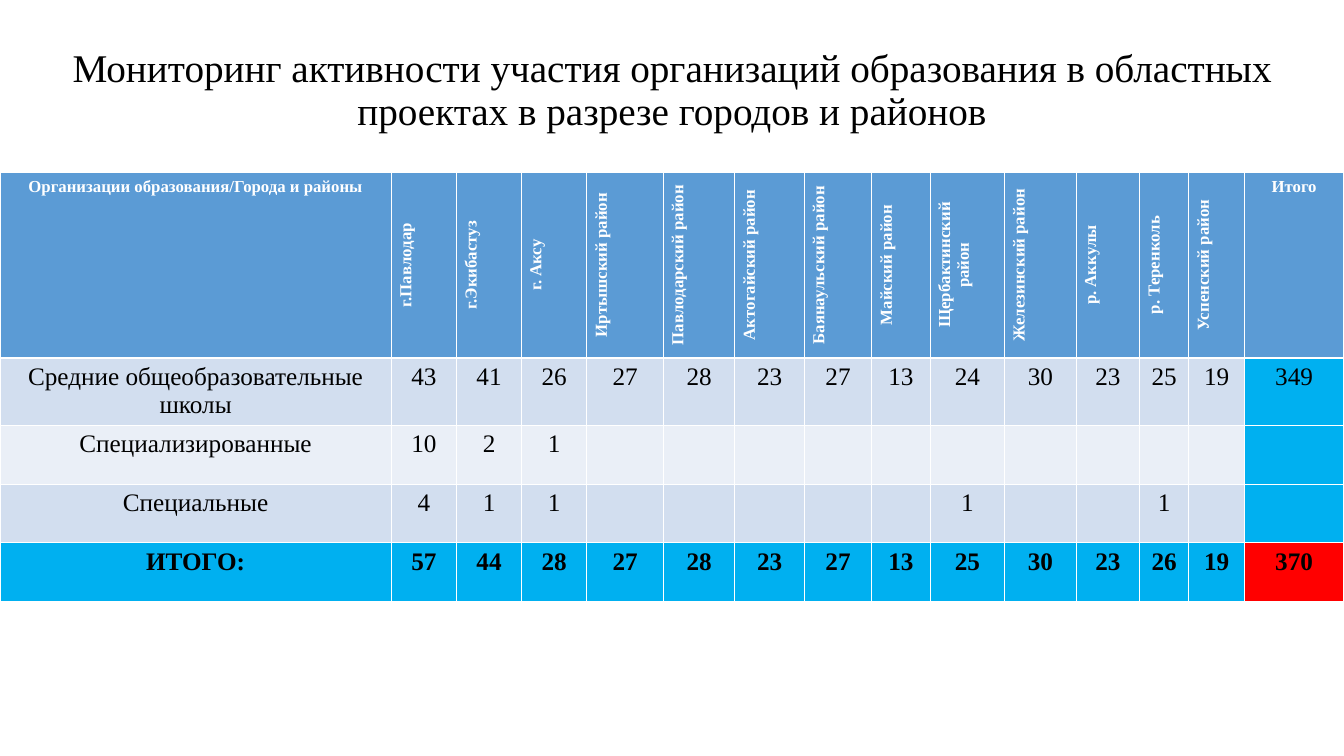
"""Build the slide that monitors participation of schools in regional projects."""
from pptx import Presentation
from pptx.dml.color import RGBColor
from pptx.enum.text import MSO_ANCHOR, PP_ALIGN
from pptx.util import Cm, Pt

COLORS = {
    "black": "000000",
    "white": "FFFFFF",
    "header": "5B9BD5",
    "odd": "D2DEEF",
    "even": "EAEFF7",
    "total": "00B0F0",
    "grand_total": "FF0000",
}
DISTRICTS = [
    "г.Павлодар", "г.Экибастуз", "г. Аксу", "Иртышский район",
    "Павлодарский район", "Актогайский район", "Баянаульский район",
    "Майский район", "Щербактинский район", "Железинский район",
    "р. Аккулы", "р. Теренколь", "Успенский район",
]
GENERAL = [43, 41, 26, 27, 28, 23, 27, 13, 24, 30, 23, 25, 19]
SPECIALIZED = [10, 2, 1] + [0] * 10
SPECIAL = [4, 1, 1, 0, 0, 0, 0, 0, 1, 0, 0, 1, 0]
TOTALS = [sum(counts) for counts in zip(GENERAL, SPECIALIZED, SPECIAL)]
ROWS = [
    ["Организации образования/Города и районы", *DISTRICTS, "Итого"],
    ["Средние общеобразовательные школы", *GENERAL, sum(GENERAL)],
    ["Специализированные", *SPECIALIZED, ""],
    ["Специальные", *SPECIAL, ""],
    ["ИТОГО:", *TOTALS, sum(TOTALS)],
]
COLUMN_WIDTHS = [9.86, 1.65, 1.63, 1.65, 1.93, 1.8, 1.75, 1.7,
                 1.47, 1.88, 1.8, 1.6, 1.24, 1.4, 2.51]
ROW_HEIGHTS = [2.82, 1.7, 1.48, 1.48, 1.48]
ROW_FILLS = ["header", "odd", "even", "odd", "total"]


def write_text(frame, text, size, color="black", bold=False):
    paragraph = frame.paragraphs[0]
    paragraph.alignment = PP_ALIGN.CENTER
    paragraph.font.size = Pt(size)
    if text:
        run = paragraph.add_run()
        run.text = text
        run.font.name = "Times New Roman"
        run.font.size = Pt(size)
        run.font.bold = bold
        run.font.color.rgb = RGBColor.from_string(COLORS[color])
    return paragraph


presentation = Presentation()
presentation.slide_width = Cm(33.87)
presentation.slide_height = Cm(19.05)
slide = presentation.slides.add_slide(presentation.slide_layouts[5])

title = slide.shapes.title
title.left, title.top, title.width, title.height = Cm(0), Cm(0), Cm(33.87), Cm(3.58)
title.text_frame.vertical_anchor = MSO_ANCHOR.MIDDLE
title.text_frame.margin_top = Cm(1.15)
heading = write_text(
    title.text_frame,
    "Мониторинг активности участия организаций образования в областных "
    "проектах в разрезе городов и районов",
    size=28,
)
heading.line_spacing = 0.9

table = slide.shapes.add_table(
    len(ROWS), len(COLUMN_WIDTHS), Cm(0), Cm(4.34), Cm(33.87), Cm(9.02)
).table
for column, width in zip(table.columns, COLUMN_WIDTHS):
    column.width = Cm(width)
for row, height in zip(table.rows, ROW_HEIGHTS):
    row.height = Cm(height)

last_row, last_column = len(ROWS) - 1, len(COLUMN_WIDTHS) - 1
for row_index, values in enumerate(ROWS):
    is_header = row_index == 0
    is_total = row_index == last_row
    for column_index, value in enumerate(values):
        cell = table.cell(row_index, column_index)
        fill = ROW_FILLS[row_index]
        if column_index == last_column and not is_header:
            fill = "grand_total" if is_total else "total"
        cell.fill.solid()
        cell.fill.fore_color.rgb = RGBColor.from_string(COLORS[fill])
        write_text(
            cell.text_frame,
            str(value or ""),
            size=12 if is_header else 18,
            color="white" if is_header else "black",
            bold=is_header or is_total,
        )
        if is_header and 0 < column_index < last_column:
            cell._tc.get_or_add_tcPr().set("vert", "vert270")

presentation.save("out.pptx")
